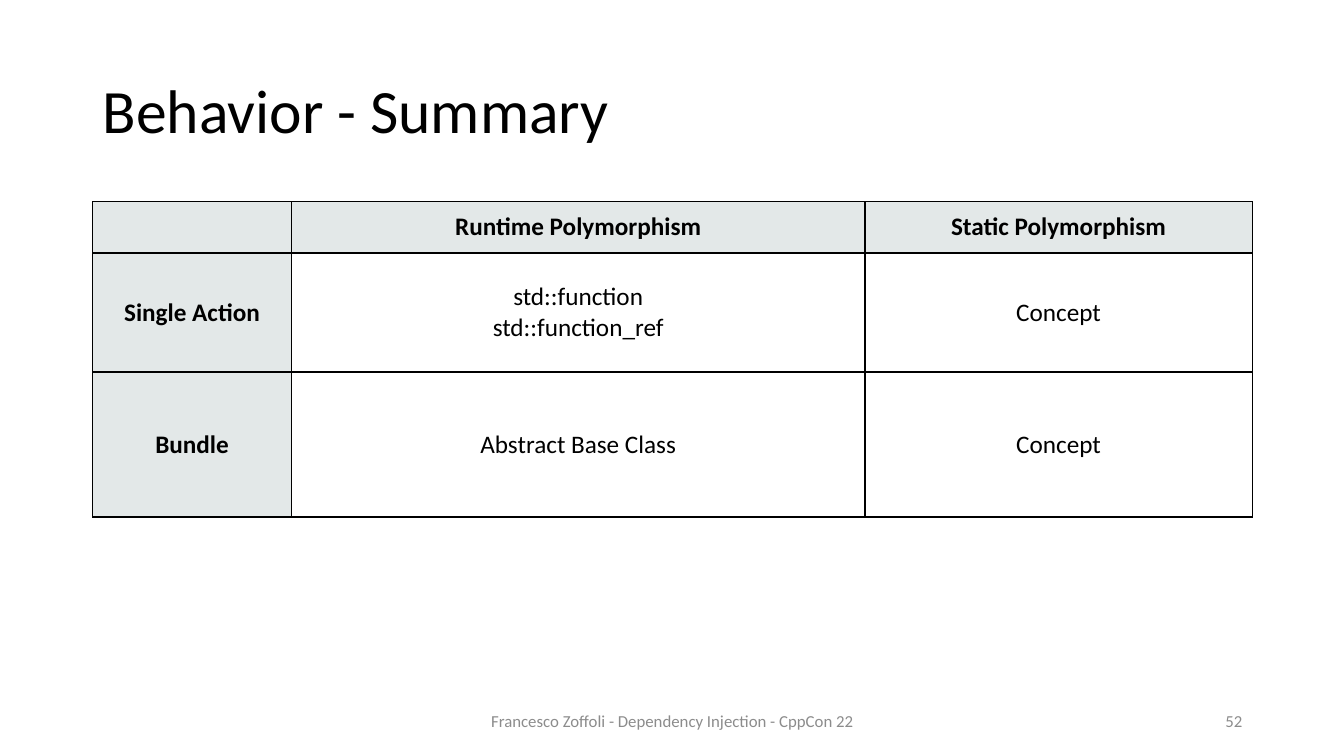
import pptx
import pptx.dml.color
import pptx.enum.text
import pptx.oxml
import pptx.oxml.ns
import pptx.util
from pptx.util import Inches

RGBColor = pptx.dml.color.RGBColor
Align = pptx.enum.text.PP_ALIGN
Anchor = pptx.enum.text.MSO_ANCHOR

BLACK = RGBColor(0x00, 0x00, 0x00)
GRAY = RGBColor(0x8C, 0x8C, 0x8C)
HEADER_FILL = RGBColor(0xE3, 0xE8, 0xE8)

MARGIN = 0.92
CONTENT_WIDTH = 11.5
COLUMN_WIDTHS = [1.97, 5.69, 3.84]
ROW_HEIGHTS = [0.51, 1.18, 1.44]
SUMMARY = [
    ["", "Runtime Polymorphism", "Static Polymorphism"],
    ["Single Action", "std::function\vstd::function_ref", "Concept"],
    ["Bundle", "Abstract Base Class", "Concept"],
]


def format_paragraph(paragraph, size, color, alignment, bold=False):
    paragraph.alignment = alignment
    paragraph.font.name = "Calibri"
    paragraph.font.size = pptx.util.Pt(size)
    paragraph.font.bold = bold
    paragraph.font.color.rgb = color


def add_title(slide, left, top, width, height):
    title = slide.shapes.title
    title.left, title.top = Inches(left), Inches(top)
    title.width, title.height = Inches(width), Inches(height)
    title.text_frame.text = "Behavior - Summary"
    title.text_frame.vertical_anchor = Anchor.MIDDLE
    paragraph = title.text_frame.paragraphs[0]
    format_paragraph(paragraph, 44, BLACK, Align.LEFT)
    paragraph.line_spacing = 0.9


def add_borders(cell):
    properties = cell._tc.get_or_add_tcPr()
    for side in ("lnL", "lnR", "lnT", "lnB"):
        properties.append(pptx.oxml.parse_xml(
            f'<a:{side} {pptx.oxml.ns.nsdecls("a")} w="{pptx.util.Pt(1)}">'
            f'<a:solidFill><a:srgbClr val="{BLACK}"/></a:solidFill></a:{side}>'))


def add_summary_table(slide, left, top, width, height):
    table = slide.shapes.add_table(
        len(ROW_HEIGHTS), len(COLUMN_WIDTHS),
        Inches(left), Inches(top), Inches(width), Inches(height)).table
    table.first_row = False
    table.horz_banding = False
    for column, column_width in zip(table.columns, COLUMN_WIDTHS):
        column.width = Inches(column_width)
    for row, row_height in zip(table.rows, ROW_HEIGHTS):
        row.height = Inches(row_height)
    for row_index, texts in enumerate(SUMMARY):
        for column_index, text in enumerate(texts):
            is_header = row_index == 0 or column_index == 0
            cell = table.cell(row_index, column_index)
            cell.text_frame.text = text
            cell.vertical_anchor = Anchor.MIDDLE
            format_paragraph(cell.text_frame.paragraphs[0], 18, BLACK,
                             Align.CENTER, is_header)
            add_borders(cell)
            if is_header:
                cell.fill.solid()
                cell.fill.fore_color.rgb = HEADER_FILL
            else:
                cell.fill.background()


def add_footer_text(slide, text, alignment, left, top, width, height):
    box = slide.shapes.add_textbox(
        Inches(left), Inches(top), Inches(width), Inches(height))
    box.text_frame.word_wrap = True
    box.text_frame.vertical_anchor = Anchor.MIDDLE
    box.text_frame.text = text
    format_paragraph(box.text_frame.paragraphs[0], 12, GRAY, alignment)


def add_footer(slide, left, top, width, height):
    label_width, number_width = 4.5, 3
    add_footer_text(slide, "Francesco Zoffoli - Dependency Injection - CppCon 22",
                    Align.CENTER, left + (width - label_width) / 2, top,
                    label_width, height)
    add_footer_text(slide, "52", Align.RIGHT, left + width - number_width, top,
                    number_width, height)


def main():
    presentation = pptx.Presentation()
    presentation.slide_width = Inches(13.33)
    presentation.slide_height = Inches(7.5)
    slide = presentation.slides.add_slide(presentation.slide_layouts[5])
    add_title(slide, MARGIN, 0.4, CONTENT_WIDTH, 1.45)
    add_summary_table(slide, MARGIN, 2, CONTENT_WIDTH, sum(ROW_HEIGHTS))
    add_footer(slide, MARGIN, 6.95, CONTENT_WIDTH, 0.4)
    presentation.save("out.pptx")


if __name__ == "__main__":
    main()
